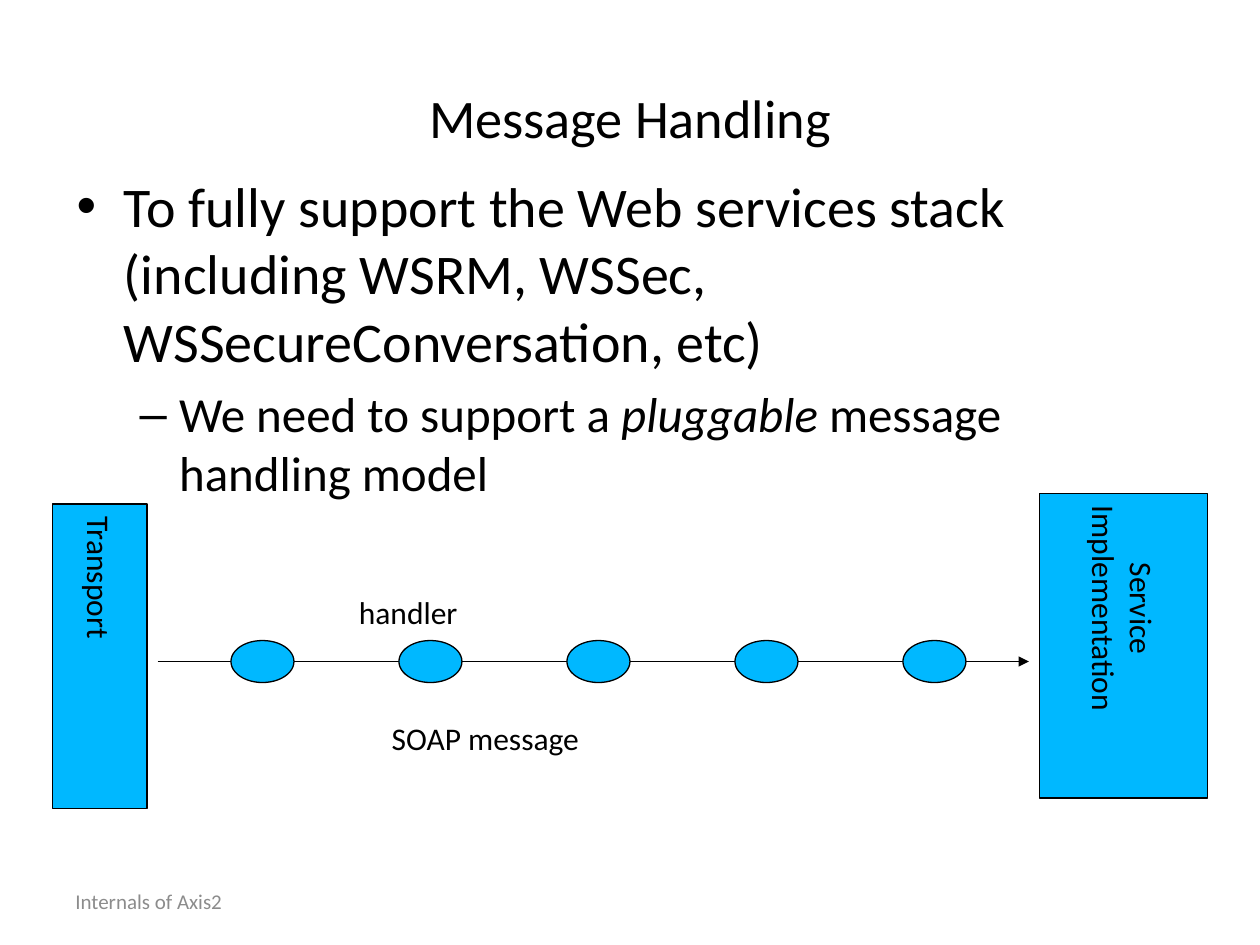
from dataclasses import dataclass

import pptx
import pptx.dml.color
import pptx.enum.shapes
import pptx.enum.text
import pptx.oxml.ns
import pptx.util
from lxml import etree

Pt = pptx.util.Pt
qn = pptx.oxml.ns.qn
MSO_SHAPE = pptx.enum.shapes.MSO_SHAPE
MSO_ANCHOR = pptx.enum.text.MSO_ANCHOR
MSO_AUTO_SIZE = pptx.enum.text.MSO_AUTO_SIZE
PP_ALIGN = pptx.enum.text.PP_ALIGN

FONT = "Calibri"
BLACK = "000000"
GREY = "8C8C8C"
BLUE = "00B8FF"
LINE_WIDTH = 0.75
LABEL_SIZE = 18


@dataclass
class Box:
    left: float
    top: float
    width: float
    height: float

    def lengths(self) -> tuple:
        return Pt(self.left), Pt(self.top), Pt(self.width), Pt(self.height)


@dataclass
class Label:
    text: str
    box: Box
    size: float = LABEL_SIZE
    color: str = BLACK
    grows: bool = True


@dataclass
class Endpoint:
    text: str
    box: Box


@dataclass
class Bullet:
    runs: list  # (text, italic) pairs
    symbol: str
    size: float
    margin: float
    hanging: float
    space_before: float


LABELS = [
    Label("Internals of Axis2", Box(36, 500.4, 168, 28.8), 12, GREY, grows=False),
    Label("SOAP message", Box(216.75, 407.5, 185, 33)),
    Label("handler", Box(198, 335.5, 95, 33)),
]
ENDPOINTS = [
    Endpoint("Service\nImplementation", Box(594, 282, 96, 174)),
    Endpoint("Transport", Box(30, 288, 54, 174)),
]
BULLETS = [
    Bullet([("To fully support the Web services stack (including WSRM, WSSec, "
             "WSSecureConversation, etc)", False)], "•", 32, 27, 27, 0),
    Bullet([("We need to support a ", False), ("pluggable ", True),
            ("message handling model", False)], "–", 28, 58.5, 22.5, 6),
]

# Message path: handlers sit on the line at equal steps
PATH_LEFT, PATH_RIGHT, PATH_Y = 90, 588, 378
HANDLER_COUNT, HANDLER_LEFT, HANDLER_STEP = 5, 132, 96
HANDLER_WIDTH, HANDLER_HEIGHT = 36, 24


def rgb(color: str) -> pptx.dml.color.RGBColor:
    return pptx.dml.color.RGBColor.from_string(color)


def format_font(font, size: float, color: str = BLACK) -> None:
    font.name = FONT
    font.size = Pt(size)
    font.color.rgb = rgb(color)


def format_paragraphs(text_frame, size: float, color: str, alignment) -> None:
    for paragraph in text_frame.paragraphs:
        paragraph.alignment = alignment
        for run in paragraph.runs:
            format_font(run.font, size, color)


def add_title(slide, text: str, box: Box) -> None:
    title = slide.shapes.title
    title.left, title.top, title.width, title.height = box.lengths()
    title.text_frame.text = text
    title.text_frame.vertical_anchor = MSO_ANCHOR.MIDDLE
    format_paragraphs(title.text_frame, 31, BLACK, PP_ALIGN.CENTER)


def add_bullets(slide, bullets: list[Bullet], box: Box) -> None:
    text_frame = slide.shapes.add_textbox(*box.lengths()).text_frame
    text_frame.word_wrap = True
    for index, bullet in enumerate(bullets):
        paragraph = text_frame.add_paragraph() if index else text_frame.paragraphs[0]
        paragraph.level = index
        paragraph.space_before = Pt(bullet.space_before)
        properties = paragraph._p.get_or_add_pPr()
        properties.set("marL", str(Pt(bullet.margin)))
        properties.set("indent", str(-Pt(bullet.hanging)))
        etree.SubElement(properties, qn("a:buFont"), typeface="Arial")
        etree.SubElement(properties, qn("a:buChar"), char=bullet.symbol)
        for text, italic in bullet.runs:
            run = paragraph.add_run()
            run.text = text
            format_font(run.font, bullet.size)
            run.font.italic = italic


def add_label(slide, label: Label) -> None:
    text_frame = slide.shapes.add_textbox(*label.box.lengths()).text_frame
    text_frame.text = label.text
    text_frame.word_wrap = not label.grows
    if label.grows:
        text_frame.auto_size = MSO_AUTO_SIZE.SHAPE_TO_FIT_TEXT
    else:
        text_frame.vertical_anchor = MSO_ANCHOR.MIDDLE
    format_paragraphs(text_frame, label.size, label.color, PP_ALIGN.LEFT)


def add_blue_shape(slide, kind, box: Box):
    shape = slide.shapes.add_shape(kind, *box.lengths())
    shape.shadow.inherit = False
    shape.fill.solid()
    shape.fill.fore_color.rgb = rgb(BLUE)
    shape.line.color.rgb = rgb(BLACK)
    shape.line.width = Pt(LINE_WIDTH)
    return shape


def add_endpoint(slide, endpoint: Endpoint) -> None:
    text_frame = add_blue_shape(slide, MSO_SHAPE.RECTANGLE, endpoint.box).text_frame
    text_frame.text = endpoint.text
    text_frame.word_wrap = False
    text_frame.vertical_anchor = MSO_ANCHOR.MIDDLE
    text_frame._txBody.bodyPr.set("vert", "eaVert")
    format_paragraphs(text_frame, LABEL_SIZE, BLACK, PP_ALIGN.CENTER)


def add_message_path(slide) -> None:
    connector = slide.shapes.add_connector(
        pptx.enum.shapes.MSO_CONNECTOR.STRAIGHT,
        Pt(PATH_LEFT), Pt(PATH_Y), Pt(PATH_RIGHT), Pt(PATH_Y))
    connector.line.color.rgb = rgb(BLACK)
    connector.line.width = Pt(LINE_WIDTH)
    etree.SubElement(connector.line._get_or_add_ln(), qn("a:tailEnd"), type="triangle")
    etree.SubElement(connector._element.spPr, qn("a:effectLst"))
    for index in range(HANDLER_COUNT):
        add_blue_shape(slide, MSO_SHAPE.OVAL, Box(
            HANDLER_LEFT + index * HANDLER_STEP, PATH_Y - HANDLER_HEIGHT / 2,
            HANDLER_WIDTH, HANDLER_HEIGHT))


def main() -> None:
    presentation = pptx.Presentation()
    presentation.slide_width, presentation.slide_height = Pt(720), Pt(540)
    slide = presentation.slides.add_slide(presentation.slide_layouts[5])

    # Heading and bullets
    add_title(slide, "Message Handling", Box(36, 21.6, 648, 90))
    add_bullets(slide, BULLETS, Box(36.75, 94.5, 645.75, 181.5))

    # Message flow diagram
    add_message_path(slide)
    for endpoint in ENDPOINTS:
        add_endpoint(slide, endpoint)

    # Diagram labels and footer
    for label in LABELS:
        add_label(slide, label)

    presentation.save("out.pptx")


if __name__ == "__main__":
    main()
